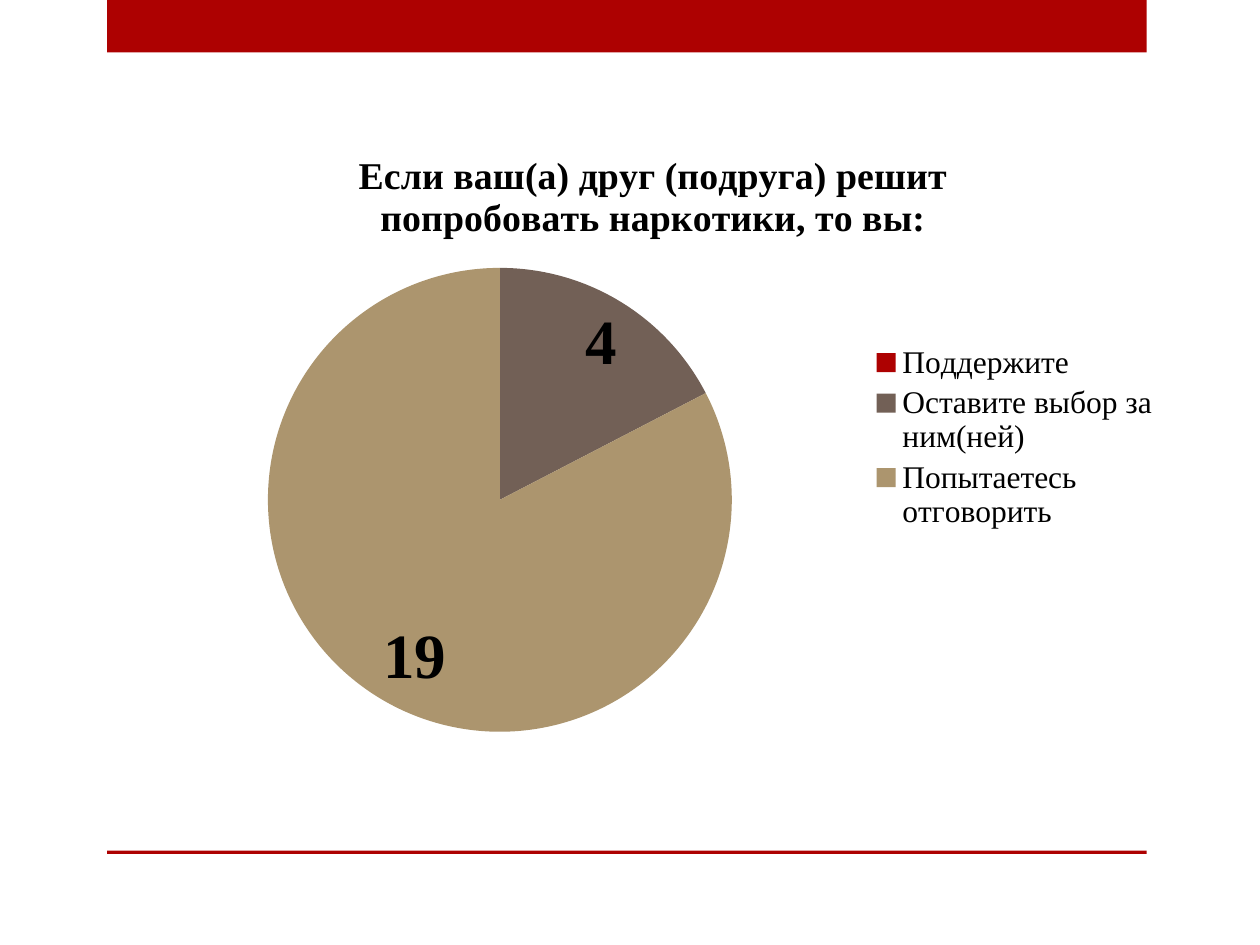
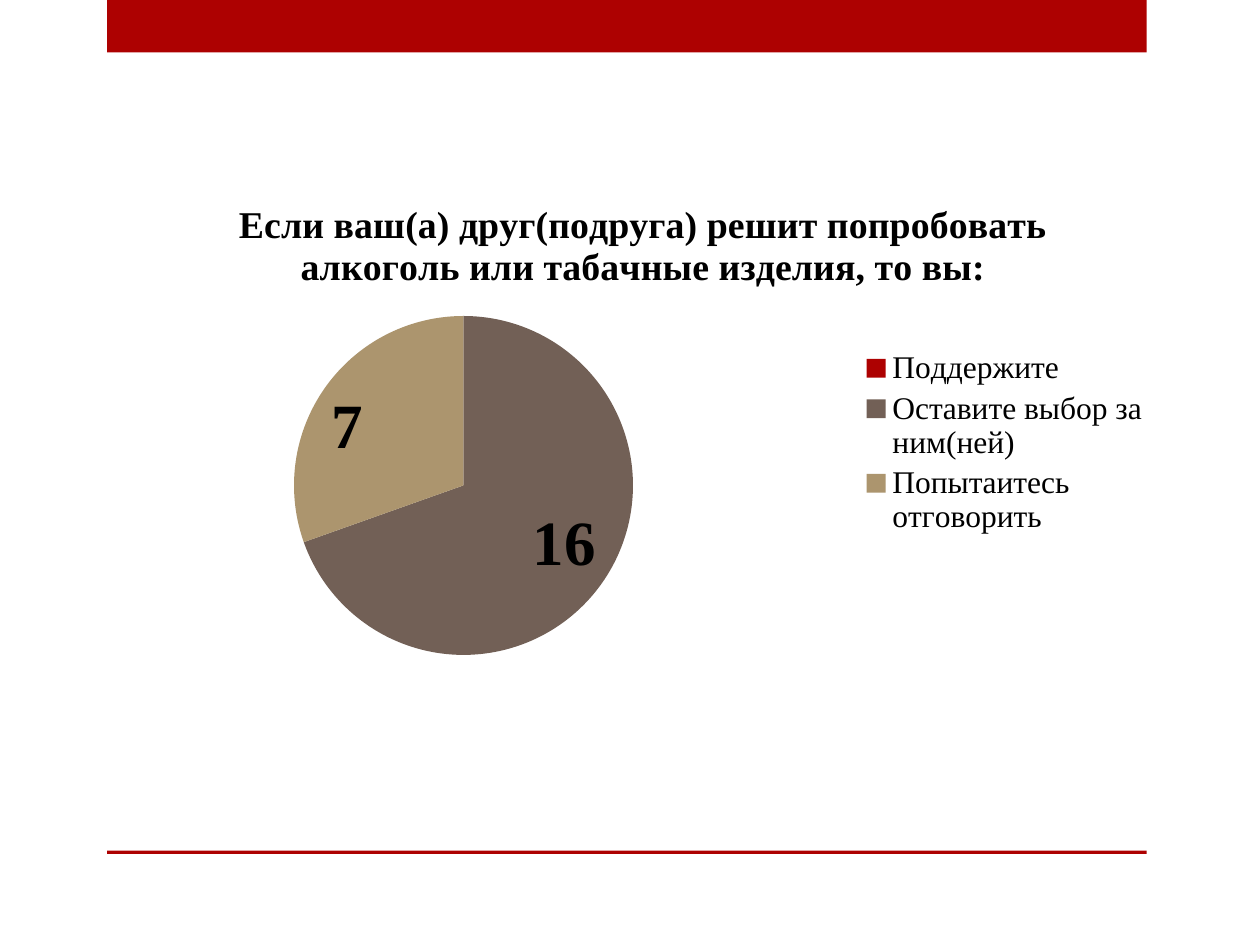
from lxml import etree
from pptx import Presentation
from pptx.chart.data import CategoryChartData
from pptx.dml.color import RGBColor
from pptx.enum.chart import XL_CHART_TYPE as CHART, XL_LABEL_POSITION as LABEL, XL_LEGEND_POSITION as LEGEND
from pptx.enum.shapes import MSO_SHAPE as SHAPE
from pptx.oxml.ns import qn
from pptx.util import Pt

# Content: places are (left, top, width, height), pies are (left, top, diameter)
QUESTIONS = [
    {
        "title": "Если ваш(а) друг (подруга) решит попробовать наркотики, то вы:",
        "answers": [("Поддержите", 0), ("Оставите выбор за ним(ней)", 4), ("Попытаетесь отговорить", 19)],
        "place": (76.3, 71.3, 594, 357.1),
        "pie": (153.1, 153.1, 265.1),
    },
    {
        "title": "Если ваш(а) друг(подруга) решит попробовать алкоголь или табачные изделия, то вы:",
        "answers": [("Поддержите", 0), ("Оставите выбор за ним(ней)", 16), ("Попытаитесь отговорить", 7)],
        "place": (70.6, 100.1, 594, 306),
        "pie": (168, 180.6, 193.7),
    },
]

# Shared style
RED, BLACK = "AD0101", "000000"
SLICES = [RED, "726056", "AC956E"]
FONT = "Times New Roman"
BANDS = [(61.2, 0, 594, 30), (61.2, 486, 594, 2)]


def rgb(value):
    return RGBColor.from_string(value)


def style_font(font, size, bold=False):
    font.name, font.size, font.bold = FONT, Pt(size), bold
    font.color.rgb = rgb(BLACK)


def add_bands(s):
    for band in BANDS:
        sp = s.shapes.add_shape(SHAPE.RECTANGLE, *map(Pt, band))
        sp.shadow.inherit = False
        sp.fill.solid()
        sp.fill.fore_color.rgb = rgb(RED)
        sp.line.fill.background()


def place_pie(chart, place, pie):
    """Fix the pie's square as fractions of the chart area."""
    left, top, width, height = place
    x, y, size = pie
    area = chart._chartSpace.chart.plotArea
    for old in area.findall(qn("c:layout")):
        area.remove(old)
    layout = etree.Element(qn("c:layout"))
    area.insert(0, layout)
    manual = etree.SubElement(layout, qn("c:manualLayout"))
    settings = [("layoutTarget", "inner"), ("xMode", "edge"), ("yMode", "edge"),
                ("x", (x - left) / width), ("y", (y - top) / height),
                ("w", size / width), ("h", size / height)]
    for tag, value in settings:
        text = value if isinstance(value, str) else f"{value:.4f}"
        etree.SubElement(manual, qn("c:" + tag)).set("val", text)


def add_pie(s, title, answers, place, pie):
    data = CategoryChartData()
    data.categories = [name for name, _ in answers]
    data.add_series(title, [count for _, count in answers])
    chart = s.shapes.add_chart(CHART.PIE, *map(Pt, place), data).chart
    style_font(chart.font, 18)

    # Title and legend
    chart.has_title = True
    r = chart.chart_title.text_frame.paragraphs[0].add_run()
    r.text = title
    style_font(r.font, 21.6, True)
    chart.chart_title.include_in_layout = False
    chart.has_legend = True
    chart.legend.position = LEGEND.RIGHT
    chart.legend.include_in_layout = False
    style_font(chart.legend.font, 18)

    # Slices and their values; the number format hides zeros
    plot = chart.plots[0]
    plot.vary_by_categories = True
    for i, color in enumerate(SLICES):
        fill = plot.series[0].points[i].format.fill
        fill.solid()
        fill.fore_color.rgb = rgb(color)
    plot.has_data_labels = True
    labels = plot.data_labels
    labels.show_value = True
    labels.show_percentage = False
    labels.number_format, labels.number_format_is_linked = "0;;;", False
    labels.position = LABEL.INSIDE_END
    style_font(labels.font, 36, True)
    place_pie(chart, place, pie)


def main():
    prs = Presentation()
    prs.slide_width, prs.slide_height = Pt(720), Pt(540)
    for question in QUESTIONS:
        s = prs.slides.add_slide(prs.slide_layouts[6])
        add_bands(s)
        add_pie(s, **question)
    prs.save("out.pptx")


if __name__ == "__main__":
    main()
